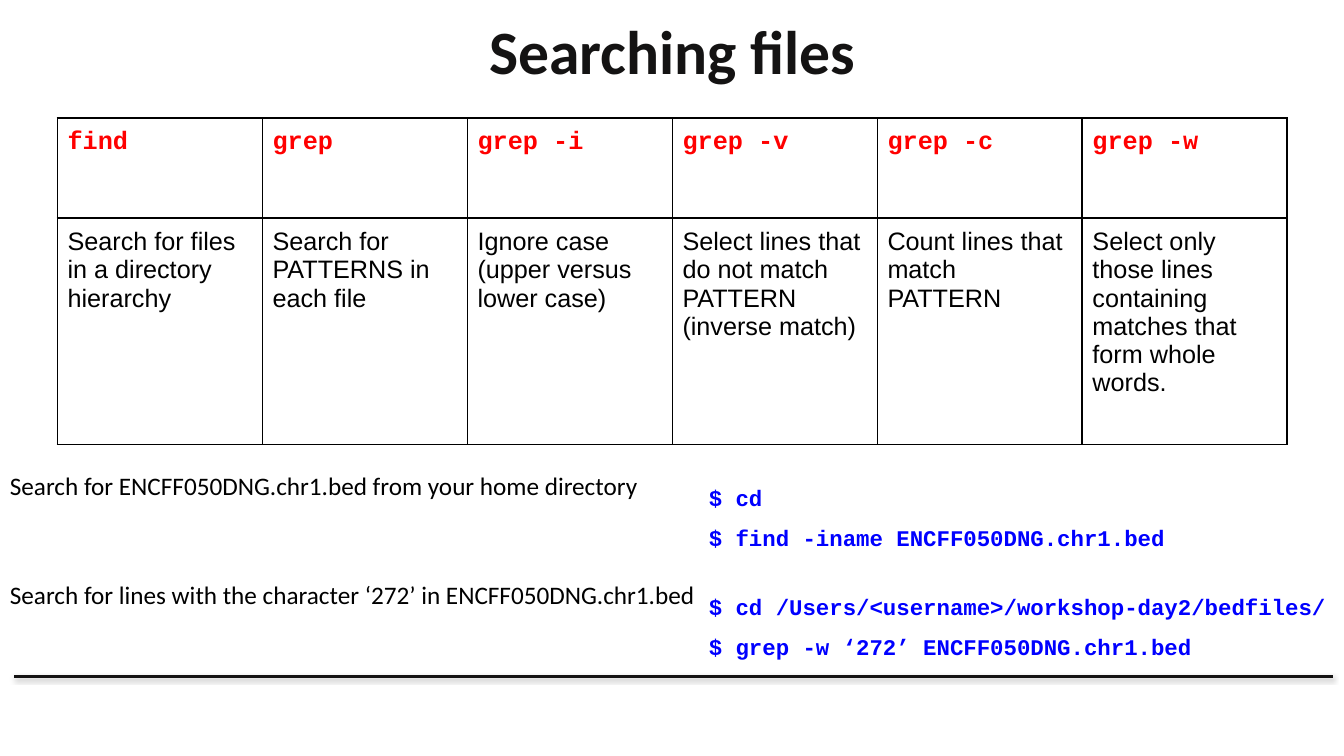
from lxml.etree import SubElement
from pptx import Presentation
from pptx.dml.color import RGBColor
from pptx.enum.shapes import MSO_CONNECTOR
from pptx.enum.text import MSO_ANCHOR, PP_ALIGN
from pptx.oxml import parse_xml
from pptx.oxml.ns import nsdecls, qn
from pptx.util import Inches, Pt

INK, BLACK, RED, BLUE = "141313", "000000", "FF0000", "0000FF"
INSET = Inches(0.1)

COMMANDS = [
    ("find", "Search for files in a directory hierarchy"),
    ("grep", "Search for PATTERNS in each file"),
    ("grep -i", "Ignore case (upper versus lower case)"),
    ("grep -v", "Select lines that do not match PATTERN\n(inverse match)"),
    ("grep -c", "Count lines that match PATTERN"),
    ("grep -w", "Select only those lines containing matches that form whole words."),
]
EXERCISES = [
    ("Search for ENCFF050DNG.chr1.bed from your home directory",
     "$ cd\n$ find -iname ENCFF050DNG.chr1.bed"),
    ("Search for lines with the character ‘272’ in ENCFF050DNG.chr1.bed",
     "$ cd /Users/<username>/workshop-day2/bedfiles/\n$ grep -w ‘272’ ENCFF050DNG.chr1.bed"),
]


def color(value):
    return RGBColor.from_string(value)


def write(frame, text, font, size, ink, bold=False, spacing=None):
    frame.text = text
    for para in frame.paragraphs:
        para.line_spacing = spacing
        for span in para.runs:
            span.font.name = font
            span.font.size = Pt(size)
            span.font.bold = bold
            span.font.color.rgb = color(ink)


def set_insets(holder):
    holder.margin_left = holder.margin_right = INSET
    holder.margin_top = holder.margin_bottom = INSET


def add_borders(cell):
    cell.fill.background()
    properties = cell._tc.get_or_add_tcPr()
    for place, side in enumerate(("lnL", "lnR", "lnT", "lnB")):
        properties.insert(place, parse_xml(
            f'<a:{side} {nsdecls("a")} w="{Pt(1.5)}"><a:solidFill>'
            f'<a:srgbClr val="{BLACK}"/></a:solidFill></a:{side}>'))


def add_title(slide, left, top, width, height):
    title = slide.shapes.title
    title.left, title.top, title.width, title.height = left, top, width, height
    frame = title.text_frame
    frame.vertical_anchor = MSO_ANCHOR.MIDDLE
    write(frame, "Searching files", "Calibri", 44, INK, bold=True)
    frame.paragraphs[0].alignment = PP_ALIGN.CENTER


def add_command_table(slide, left, top, width, row_heights):
    table = slide.shapes.add_table(
        len(row_heights), len(COMMANDS), left, top, width, sum(row_heights)).table
    table.first_row = table.horz_banding = False
    for row, height in zip(table.rows, row_heights):
        row.height = height
    for column, (command, meaning) in enumerate(COMMANDS):
        header, body = table.cell(0, column), table.cell(1, column)
        write(header.text_frame, command, "Courier New", 18, RED, bold=True)
        write(body.text_frame, meaning, "Arial", 18, BLACK)
        for cell in (header, body):
            set_insets(cell)
            add_borders(cell)


def add_text(slide, left, top, width, height, *style, **options):
    frame = slide.shapes.add_textbox(left, top, width, height).text_frame
    frame.word_wrap = True
    set_insets(frame)
    write(frame, *style, **options)


def add_exercises(slide, left, top, width, pitch):
    code_left = left + int(width * 0.52)
    for row, (task, code) in enumerate(EXERCISES):
        row_top = top + row * pitch
        add_text(slide, left, row_top, Inches(7.2), Inches(0.57),
                 task, "Calibri", 18, BLACK)
        add_text(slide, code_left, row_top, Inches(6.53), Inches(0.8),
                 code, "Courier New", 16, BLUE, bold=True, spacing=1.5)


def add_rule(slide, left, top, width):
    rule = slide.shapes.add_connector(
        MSO_CONNECTOR.STRAIGHT, left, top, left + width, top)
    rule.line.color.rgb = color(INK)
    rule.line.width = Pt(2)
    effects = SubElement(rule._element.spPr, qn("a:effectLst"))
    shadow = SubElement(effects, qn("a:outerShdw"), blurRad=str(Pt(3.1)),
                        dist=str(Pt(1.6)), dir="5400000", rotWithShape="0")
    tint = SubElement(shadow, qn("a:srgbClr"), val=BLACK)
    SubElement(tint, qn("a:alpha"), val="38000")


def main():
    deck = Presentation()
    deck.slide_width, deck.slide_height = Inches(13.33), Inches(7.5)
    slide = deck.slides.add_slide(deck.slide_layouts[5])
    add_rule(slide, Inches(0.14), Inches(6.71), Inches(13.08))
    add_title(slide, Inches(0.67), Inches(0.01), Inches(12), Inches(0.96))
    add_command_table(slide, Inches(0.57), Inches(1.17), Inches(12.2),
                      (Inches(0.99), Inches(2.25)))
    add_exercises(slide, 0, Inches(4.57), deck.slide_width, Inches(1.08))
    deck.save("out.pptx")


if __name__ == "__main__":
    main()
